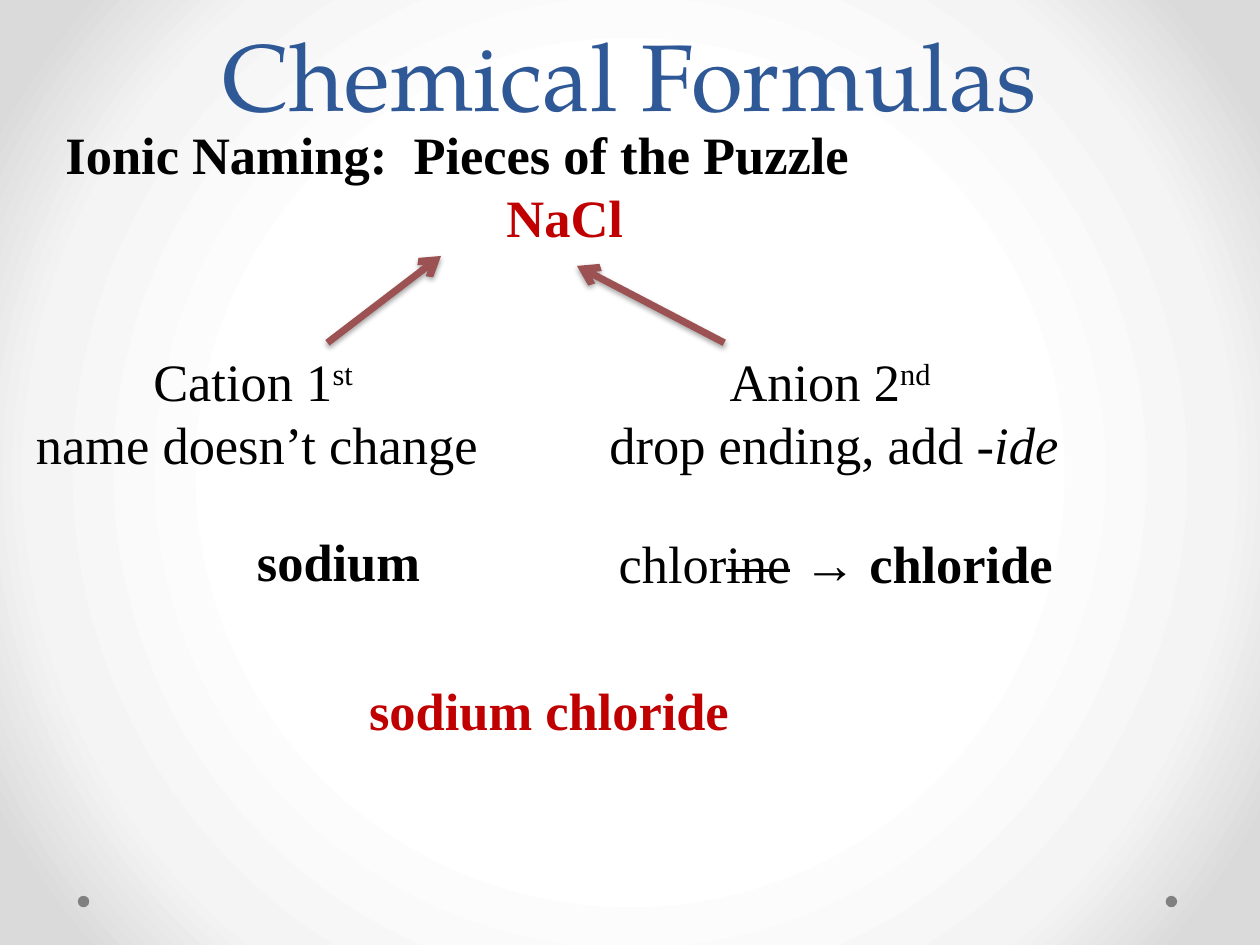
from pptx import Presentation
from pptx.dml.color import RGBColor
from pptx.enum.shapes import MSO_CONNECTOR, MSO_SHAPE
from pptx.enum.text import MSO_ANCHOR, MSO_AUTO_SIZE, PP_ALIGN
from pptx.oxml import parse_xml
from pptx.oxml.ns import nsdecls
from pptx.util import Cm, Pt

BLACK, RED, BLUE = "000000", "C00000", "2F5897"
ARROW, DOT = "9C5252", "808080"
BODY_FONT, TITLE_FONT = "Times New Roman", "TeX Gyre Pagella"


def rgb(value):
    """Turn a hex string into a colour."""
    return RGBColor.from_string(value)


def paint_background(page):
    """Give the page a white centre that fades to grey edges."""
    stops = "".join(
        f'<a:gs pos="{position * 1000}"><a:srgbClr val="{color}"/></a:gs>'
        for position, color in ((50, "FFFFFF"), (76, "F4F4F4"), (92, "DADADA"))
    )
    background = parse_xml(
        f'<p:bg {nsdecls("p", "a")}><p:bgPr><a:gradFill rotWithShape="1">'
        f'<a:gsLst>{stops}</a:gsLst><a:path path="circle">'
        '<a:fillToRect l="50000" t="50000" r="50000" b="50000"/></a:path>'
        '</a:gradFill><a:effectLst/></p:bgPr></p:bg>'
    )
    page._element.cSld.insert(0, background)


def add_box(page, left, top, width, height):
    """Add an empty wrapping text box."""
    box = page.shapes.add_textbox(Cm(left), Cm(top), Cm(width), Cm(height))
    box.text_frame.word_wrap = True
    return box


def add_span(para, text, color=BLACK, size=30, font=BODY_FONT, bold=False,
             italic=False, **marks):
    """Add one run; marks are extra run attributes such as baseline."""
    span = para.add_run()
    span.text = text
    span.font.name = font
    span.font.size = Pt(size)
    span.font.bold = bold
    span.font.italic = italic
    span.font.color.rgb = rgb(color)
    for name, value in marks.items():
        span._r.get_or_add_rPr().set(name, value)


def add_title(page, text):
    """Add the page title."""
    frame = add_box(page, 1.9, 0.64, 21.59, 2.11).text_frame
    frame.vertical_anchor = MSO_ANCHOR.BOTTOM
    para = frame.paragraphs[0]
    para.alignment = PP_ALIGN.CENTER
    para.line_spacing = Pt(58)
    add_span(para, text, BLUE, 54, TITLE_FONT)


def add_text(page, place, *lines, align=PP_ALIGN.LEFT):
    """Add a box with one paragraph per line of (text, style) spans."""
    frame = add_box(page, *place).text_frame
    frame.auto_size = MSO_AUTO_SIZE.SHAPE_TO_FIT_TEXT
    for number, spans in enumerate(lines):
        para = frame.add_paragraph() if number else frame.paragraphs[0]
        para.alignment = align
        for text, style in spans:
            add_span(para, text, **style)
    return frame


def add_arrow(page, start, end):
    """Add a thick arrow with a soft shadow below it."""
    arrow = page.shapes.add_connector(
        MSO_CONNECTOR.STRAIGHT, *map(Cm, start), *map(Cm, end))
    arrow.line.color.rgb = rgb(ARROW)
    arrow.line.width = Pt(4)
    arrow.line._get_or_add_ln().append(
        parse_xml(f'<a:tailEnd {nsdecls("a")} type="arrow"/>'))
    arrow._element.spPr.append(parse_xml(
        f'<a:effectLst {nsdecls("a")}><a:outerShdw blurRad="{Pt(3.1)}" '
        f'dist="{Pt(1.8)}" dir="5400000" rotWithShape="0">'
        '<a:srgbClr val="000000"><a:alpha val="35000"/></a:srgbClr>'
        '</a:outerShdw></a:effectLst>'))


def add_dot(page, left):
    """Add a small grey dot near the bottom edge."""
    dot = page.shapes.add_shape(
        MSO_SHAPE.OVAL, Cm(left), Cm(18.06), Cm(0.23), Cm(0.23))
    dot.shadow.inherit = False
    dot.fill.solid()
    dot.fill.fore_color.rgb = rgb(DOT)
    dot.line.fill.background()


def main():
    """Build the slide and save it."""
    deck = Presentation()
    deck.slide_width, deck.slide_height = Cm(25.4), Cm(19.05)
    page = deck.slides.add_slide(deck.slide_layouts[6])
    plain, bold, red = {}, {"bold": True}, {"bold": True, "color": RED}
    raised = {"baseline": "30000"}

    paint_background(page)
    for left in (23.5, 1.57):
        add_dot(page, left)
    add_title(page, "Chemical Formulas")

    heading = add_text(page, (1.07, 2.34, 23.06, 2.82),
                       [("Ionic Naming:  Pieces of the Puzzle", bold)],
                       [("NaCl", red)])
    properties = heading.paragraphs[1]._p.get_or_add_pPr()
    properties.set("marL", str(Cm(8.89)))
    properties.set("indent", "0")

    add_text(page, (4.93, 10.54, 4.52, 1.55), [("sodium", bold)])
    add_text(page, (12.22, 10.59, 11.23, 1.55),
             [("chlor", plain), ("ine", {"strike": "sngStrike"}),
              (" →", plain), (" chloride", bold)])
    add_text(page, (7.19, 13.54, 7.82, 1.55), [("sodium chloride", red)])

    add_arrow(page, (6.6, 6.91), (8.89, 5.16))
    add_arrow(page, (14.6, 6.91), (11.63, 5.36))

    ions = (
        (0, "Cation 1", "st ", [("name doesn’t change", plain)]),
        (11.63, "Anion 2", "nd ",
         [("drop ending, add ", plain), ("-ide", {"italic": True})]),
    )
    for left, ion, ordinal, rule in ions:
        add_text(page, (left, 6.91, 10.36, 2.82),
                 [(ion, plain), (ordinal, raised)], rule,
                 align=PP_ALIGN.CENTER)

    deck.save("out.pptx")


if __name__ == "__main__":
    main()
